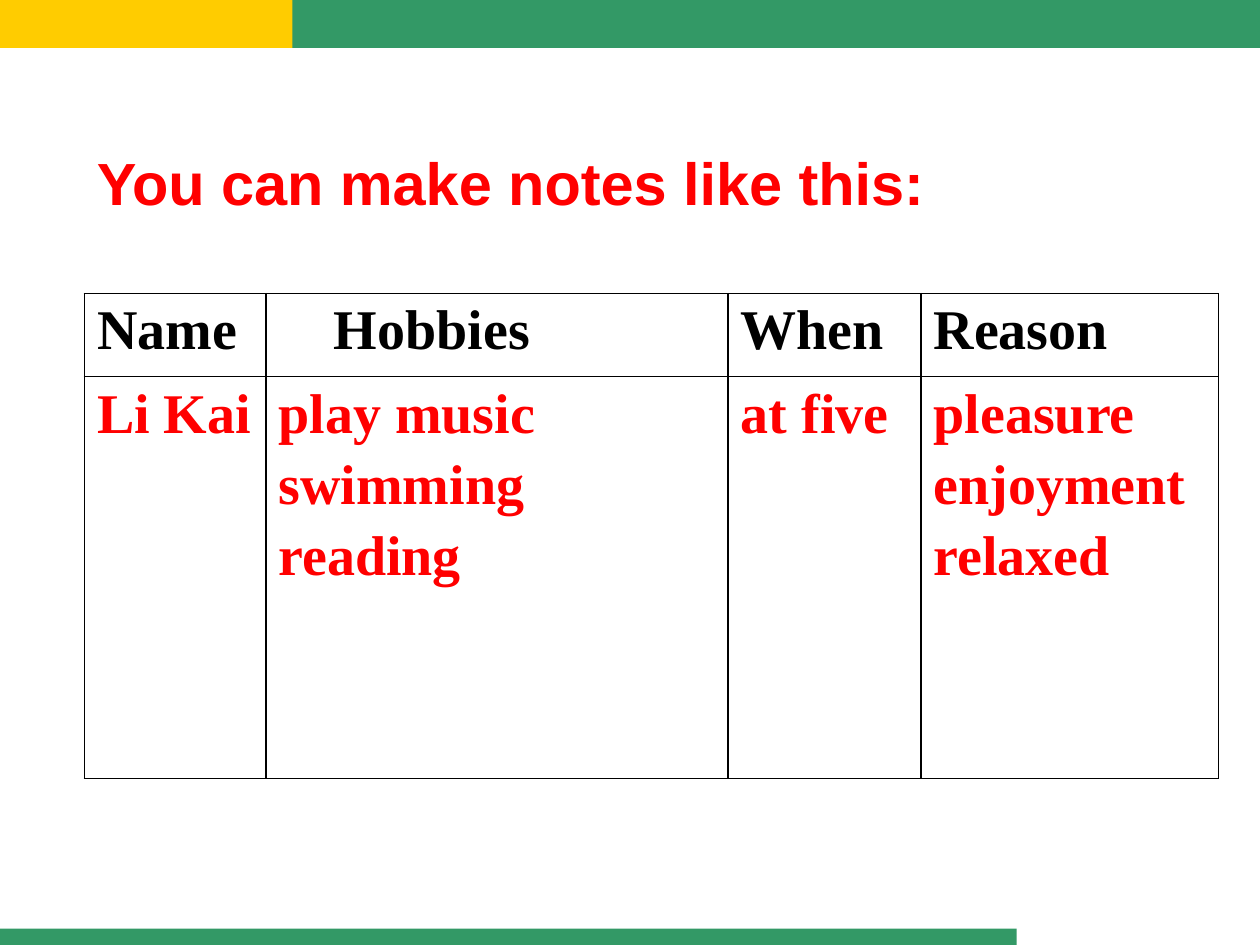
from lxml import etree
from pptx import Presentation
from pptx import util as u
from pptx.dml.color import RGBColor
from pptx.enum import shapes, text
from pptx.oxml.ns import qn

YELLOW = RGBColor(0xFF, 0xCC, 0x00)
GREEN = RGBColor(0x33, 0x99, 0x66)
RED = RGBColor(0xFF, 0x00, 0x00)
BLACK = RGBColor(0x00, 0x00, 0x00)
WHITE = RGBColor(0xFF, 0xFF, 0xFF)

COLUMN_WIDTHS = (1.44, 3.67, 1.53, 2.36)
ROW_HEIGHTS = (0.66, 3.19)
NOTES = (
    (["Name"], ["Hobbies"], ["When"], ["Reason"]),
    (["Li Kai"], ["play music", "swimming", "reading"], ["at five"],
     ["pleasure", "enjoyment", "relaxed"]),
)


def add_bar(page, box, color):
    bar = page.shapes.add_shape(shapes.MSO_SHAPE.RECTANGLE, *map(u.Inches, box))
    bar.shadow.inherit = False
    bar.fill.solid()
    bar.fill.fore_color.rgb = color
    bar.line.fill.background()


def add_span(para, words, font, size, color):
    span = para.add_run()
    span.text = words
    span.font.name = font
    span.font.size = u.Pt(size)
    span.font.bold = True
    span.font.color.rgb = color


def add_title(page, box):
    frame = page.shapes.add_textbox(*map(u.Inches, box)).text_frame
    frame.word_wrap = False
    frame.auto_size = text.MSO_AUTO_SIZE.SHAPE_TO_FIT_TEXT
    add_span(frame.paragraphs[0], "You can make notes like this:", "Arial", 34, RED)


def add_borders(cell):
    properties = cell._tc.get_or_add_tcPr()
    for position, side in enumerate(("lnL", "lnR", "lnT", "lnB")):
        line = etree.Element(qn(f"a:{side}"), w=str(u.Pt(1)))
        fill = etree.SubElement(line, qn("a:solidFill"))
        etree.SubElement(fill, qn("a:srgbClr"), val=str(BLACK))
        # Border lines must come before the cell fill
        properties.insert(position, line)


def fill_cell(cell, lines, color):
    cell.fill.solid()
    cell.fill.fore_color.rgb = WHITE
    add_borders(cell)
    frame = cell.text_frame
    for number, words in enumerate(lines):
        para = frame.add_paragraph() if number else frame.paragraphs[0]
        para.space_before = u.Pt(5.2)
        add_span(para, words, "Times New Roman", 32, color)


def add_notes_table(page, box):
    table = page.shapes.add_table(
        len(ROW_HEIGHTS), len(COLUMN_WIDTHS), *map(u.Inches, box)).table
    for column, width in zip(table.columns, COLUMN_WIDTHS):
        column.width = u.Inches(width)
    for row, height, entries, color in zip(
            table.rows, ROW_HEIGHTS, NOTES, (BLACK, RED)):
        row.height = u.Inches(height)
        for cell, lines in zip(row.cells, entries):
            fill_cell(cell, lines, color)
    # The Hobbies heading is indented
    table.cell(0, 1).margin_left = u.Inches(0.54)


def main():
    deck = Presentation()
    deck.slide_width, deck.slide_height = u.Inches(10), u.Inches(7.5)
    page = deck.slides.add_slide(deck.slide_layouts[6])

    # Top and bottom bars
    add_bar(page, (0, 0, 6.89, 0.38), YELLOW)
    add_bar(page, (2.32, 0, 7.68, 0.38), GREEN)
    add_bar(page, (0, 7.37, 8.07, 0.13), GREEN)

    # Title and notes
    add_notes_table(page, (0.67, 2.33, sum(COLUMN_WIDTHS), sum(ROW_HEIGHTS)))
    add_title(page, (0.67, 1.11, 6.82, 0.67))

    deck.save("out.pptx")


if __name__ == "__main__":
    main()
